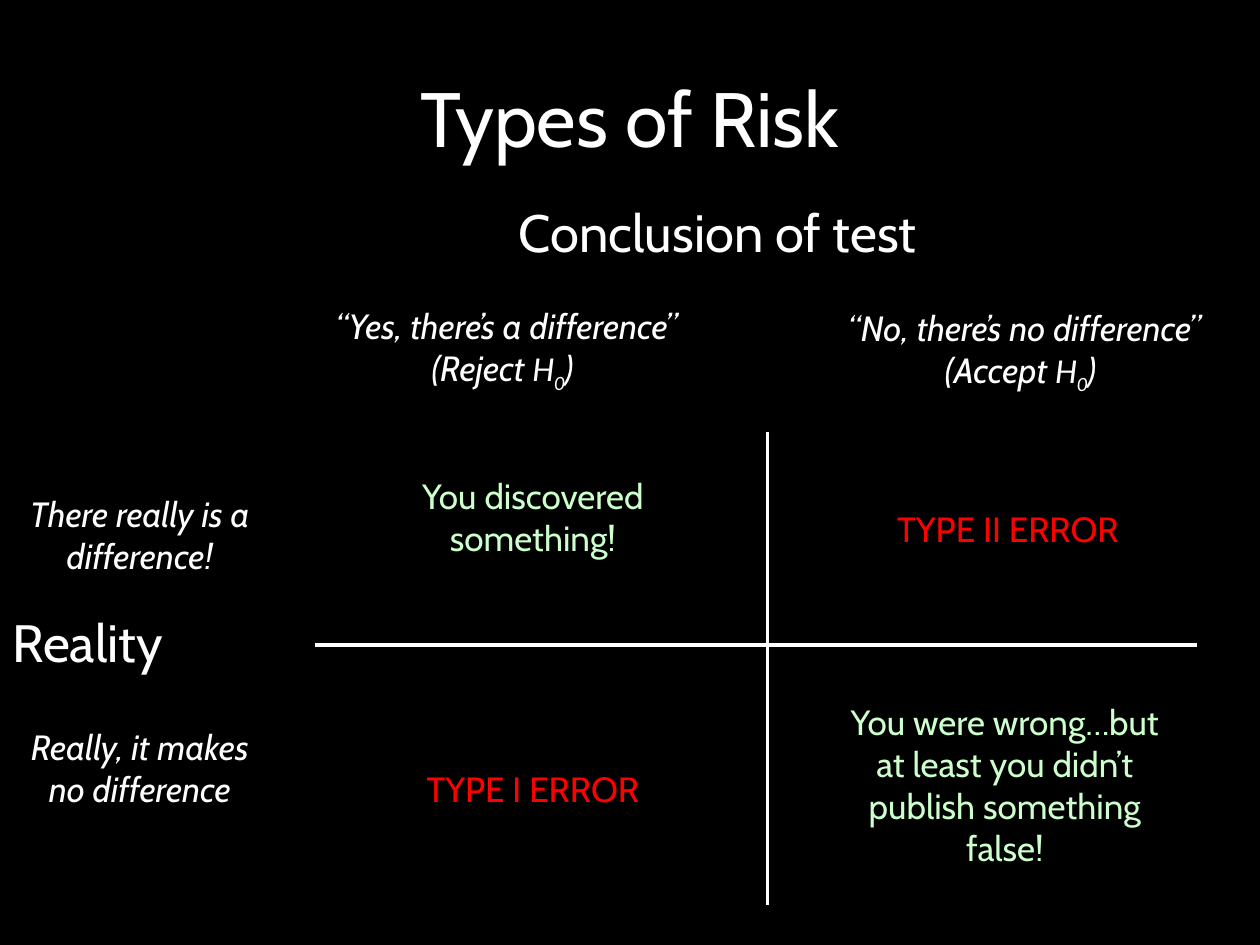
from pptx import Presentation
from pptx.dml.color import RGBColor
from pptx.enum.shapes import MSO_CONNECTOR
from pptx.enum.text import MSO_ANCHOR, MSO_AUTO_SIZE, PP_ALIGN
from pptx.oxml.ns import qn
from pptx.util import Inches, Pt
from lxml import etree

CENTER, LEFT = PP_ALIGN.CENTER, PP_ALIGN.LEFT
TOP, MIDDLE = MSO_ANCHOR.TOP, MSO_ANCHOR.MIDDLE
STRAIGHT = MSO_CONNECTOR.STRAIGHT
FIT_SHAPE = MSO_AUTO_SIZE.SHAPE_TO_FIT_TEXT
WHITE, BLACK, GREEN, RED = "FFFFFF", "000000", "CCFFCC", "FF0000"


def rgb(color):
    return RGBColor.from_string(color)


class RiskSlide:
    """Holds the style and the current slide, and draws its elements."""

    font, symbol_font = "Cabin", "Calibri"

    def __init__(self, prs):
        self.s = prs.slides.add_slide(prs.slide_layouts[6])
        fill = self.s.background.fill
        fill.solid()
        fill.fore_color.rgb = rgb(BLACK)

    def text(self, box, lines, size=20, color=WHITE, italic=False,
             align=CENTER, wrap=True, anchor=TOP):
        tf = self.s.shapes.add_textbox(*map(Inches, box)).text_frame
        tf.word_wrap, tf.vertical_anchor = wrap, anchor
        if anchor == TOP:
            tf.auto_size = FIT_SHAPE
        tf.text = "\n".join(lines)
        for p in tf.paragraphs:
            p.alignment = align
            p.font.name, p.font.size = self.font, Pt(size)
            p.font.italic = italic
            p.font.color.rgb = rgb(color)
        return tf

    def heading(self, box, text):
        self.text(box, [text], size=30, align=LEFT, wrap=False)

    def verdict(self, left, top, quote, action):
        tf = self.text((left, top, 4.12, 0.77), [quote, f"({action} "], italic=True)
        p = tf.paragraphs[1]
        for text, font in (("H", self.symbol_font), ("0", self.symbol_font), (") ", self.font)):
            r = p.add_run()
            r.text, r.font.name = text, font
            if text == "0":
                r._r.get_or_add_rPr().set("baseline", "-25000")

    def line(self, x1, y1, x2, y2):
        sp = self.s.shapes.add_connector(STRAIGHT, *map(Inches, (x1, y1, x2, y2)))
        sp.line.color.rgb = rgb(WHITE)
        sp.line.width = Pt(2)
        etree.SubElement(sp._element.spPr, qn("a:effectLst"))


def main():
    prs = Presentation()
    prs.slide_width, prs.slide_height = Inches(10), Inches(7.5)
    risk = RiskSlide(prs)

    risk.text((0.5, 0.3, 9, 1.25), ["Types of Risk"], size=44, anchor=MIDDLE)
    risk.heading((4.02, 1.54, 3.46, 0.61), "Conclusion of test")
    risk.heading((0, 4.79, 1.44, 0.61), "Reality")

    risk.verdict(1.96, 2.37, "“Yes, there’s a difference”", "Reject")
    risk.verdict(6.07, 2.38, "“No, there’s no difference”", "Accept")
    for top, text in ((3.86, "There really is a difference!"),
                      (5.71, "Really, it makes no difference")):
        risk.text((0.06, top, 2.1, 0.77), [text], italic=True)

    risk.line(6.09, 3.43, 6.09, 7.18)
    risk.line(9.5, 5.12, 2.5, 5.12)

    for box, text, color in (
        ((3.18, 3.72, 2.1, 0.77), "You discovered something!", GREEN),
        ((6.95, 3.98, 2.1, 0.44), "TYPE II ERROR", RED),
        ((3.18, 6.04, 2.1, 0.44), "TYPE I ERROR", RED),
        ((6.53, 5.51, 2.89, 1.45),
         "You were wrong…but at least you didn’t publish something false!", GREEN),
    ):
        risk.text(box, [text], color=color)

    prs.save("out.pptx")


if __name__ == "__main__":
    main()
